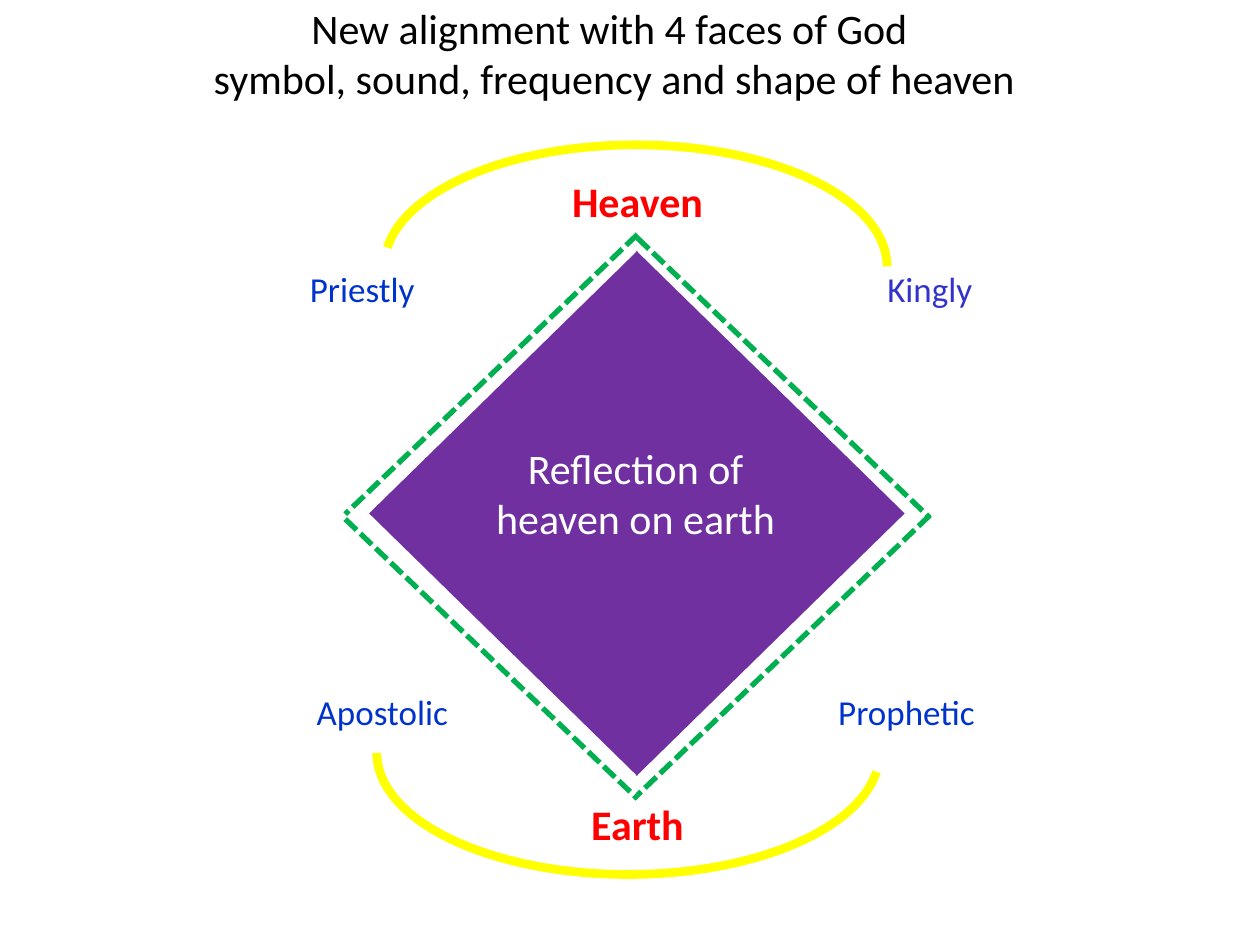
from lxml import etree
from pptx import Presentation
from pptx.dml.color import RGBColor
from pptx.enum.dml import MSO_LINE_DASH_STYLE as Dash
from pptx.enum.shapes import MSO_CONNECTOR as Connector, MSO_SHAPE as Shape
from pptx.enum.text import PP_ALIGN as Align
from pptx.oxml.ns import qn
from pptx.util import Inches, Pt

COLORS = {
    "black": "000000", "white": "FFFFFF", "red": "FF0000", "blue": "0033CC",
    "indigo": "3333CC", "green": "00B050", "purple": "7030A0", "yellow": "FFFF00",
}


def color(name):
    return RGBColor.from_string(COLORS[name])


def add_label(page, lines, place, size, tint, bold=False):
    box = page.shapes.add_textbox(*map(Inches, place))
    frame = box.text_frame
    frame.word_wrap = True
    frame.margin_left = frame.margin_right = frame.margin_top = frame.margin_bottom = 0
    para = frame.paragraphs[0]
    para.alignment = Align.CENTER
    for index, line in enumerate(lines):
        if index:
            para.add_line_break()
        span = para.add_run()
        span.text = line
        span.font.name = "Calibri"
        span.font.size = Pt(size)
        span.font.bold = bold
        span.font.color.rgb = color(tint)


deck = Presentation()
deck.slide_width, deck.slide_height = Inches(10), Inches(7.5)
page = deck.slides.add_slide(deck.slide_layouts[6])

title = ["New alignment with 4 faces of God ", "symbol, sound, frequency and shape of heaven"]
add_label(page, title, (1.45, 0.02, 6.85, 0.92), 24, "black")

diamond = page.shapes.add_group_shape()
left, middle, right = 2.74, 5.06, 7.38
edges = [
    (middle, 1.86, left, 4.08),
    (middle, 1.89, right, 4.11),
    (right, 4.09, middle, 6.31),
    (left, 4.12, middle, 6.34),
]
for edge in edges:
    side = diamond.shapes.add_connector(Connector.STRAIGHT, *map(Inches, edge))
    side.line.color.rgb = color("green")
    side.line.width = Pt(3)
    side.line.dash_style = Dash.SQUARE_DOT
    etree.SubElement(side.element.spPr, qn("a:effectLst"))

for x, angle in [(4.03, 90), (1.91, 270)]:
    half = diamond.shapes.add_shape(
        Shape.ISOSCELES_TRIANGLE, Inches(x), Inches(3.01), Inches(4.17), Inches(2.13))
    half.rotation = angle
    half.shadow.inherit = False
    half.fill.solid()
    half.fill.fore_color.rgb = color("purple")
    half.line.fill.background()

add_label(page, ["Reflection of heaven on earth"], (3.73, 3.51, 2.63, 0.81), 24, "white")

corners = [
    ("Apostolic", 2.3, 5.48, 1.47, "blue"),
    ("Priestly", 2.14, 2.12, 1.47, "blue"),
    ("Prophetic", 6.25, 5.48, 1.89, "blue"),
    ("Kingly", 6.75, 2.12, 1.26, "indigo"),
]
for name, x, y, width, tint in corners:
    add_label(page, [name], (x, y, width, 0.33), 20, tint)

for x, y, angle in [(3.05, 1.15, 0), (2.99, 5.01, 180)]:
    arc = page.shapes.add_shape(Shape.ARC, Inches(x), Inches(y), Inches(3.99), Inches(1.93))
    arc.adjustments[0] = 110.61
    arc.adjustments[1] = 0
    arc.rotation = angle
    arc.shadow.inherit = False
    arc.fill.background()
    arc.line.color.rgb = color("yellow")
    arc.line.width = Pt(5)

for name, y in [("Heaven", 1.39), ("Earth", 6.34)]:
    add_label(page, [name], (4.43, y, 1.26, 0.4), 24, "red", bold=True)

deck.save("out.pptx")
